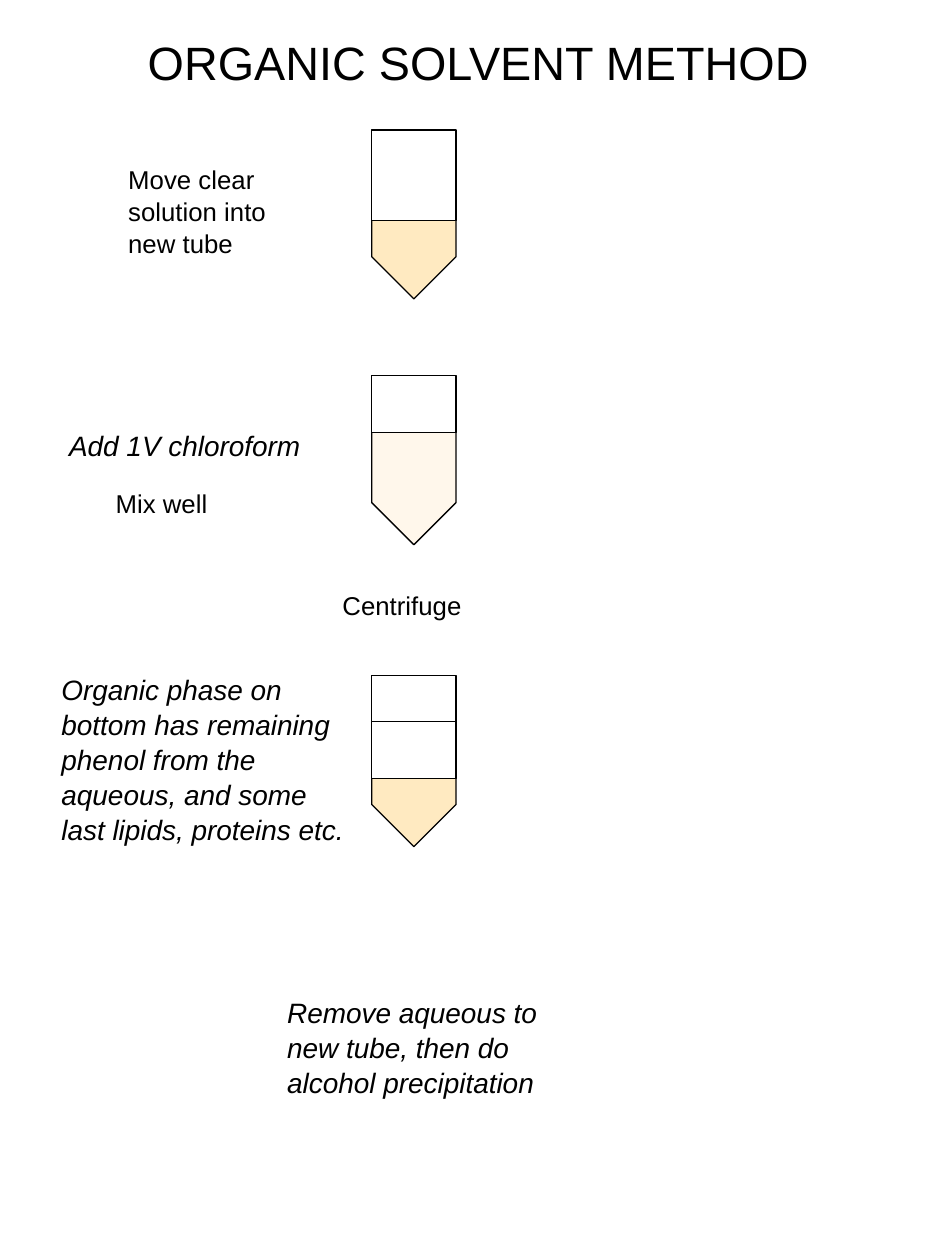
import pptx
import pptx.util
import pptx.dml.color
import pptx.enum.shapes
import pptx.enum.text

Pt = pptx.util.Pt
SHAPE = pptx.enum.shapes.MSO_SHAPE
ALIGN = pptx.enum.text.PP_ALIGN
HUES = {"ink": "000000", "white": "FFFFFF", "amber": "FFEAC1", "cream": "FFF7EB"}
STEP = {"size": Pt(14.7), "italic": False}
NOTE = {"size": Pt(16), "italic": True}
TITLE = {"size": Pt(26.7), "italic": False}


def hue(name):
    return pptx.dml.color.RGBColor.from_string(HUES[name])


class Board:
    face = "Arial"
    left, wide, tall = 212.4, 48.2, 95.8

    def __init__(self, slide):
        self.slide = slide

    def text(self, words, x, y, w, h, style, align=ALIGN.LEFT):
        box = self.slide.shapes.add_textbox(Pt(x), Pt(y), Pt(w), Pt(h))
        frame = box.text_frame
        frame.word_wrap = True
        frame.text = words
        for para in frame.paragraphs:
            para.alignment = align
            para.line_spacing = 1.04
            for key, value in {"name": self.face, **style}.items():
                setattr(para.font, key, value)
            para.font.color.rgb = hue("ink")

    def block(self, group, kind, x, y, w, h, fill, turn=0):
        shape = group.shapes.add_shape(kind, Pt(x), Pt(y), Pt(w), Pt(h))
        shape.rotation = turn
        shape.shadow.inherit = False
        shape.fill.solid()
        shape.fill.fore_color.rgb = hue(fill)
        shape.line.color.rgb = hue("ink")
        shape.line.width = Pt(0.75)

    def tube(self, y, fill, bands):
        group = self.slide.shapes.add_group_shape()
        x = self.left + (self.wide - self.tall) / 2
        top = y + (self.tall - self.wide) / 2
        self.block(group, SHAPE.PENTAGON, x, top, self.tall, self.wide, fill, 90)
        for start, height in bands:
            self.block(group, SHAPE.RECTANGLE, self.left, start, self.wide, height, "white")


def main():
    deck = pptx.Presentation()
    deck.slide_width, deck.slide_height = Pt(540), Pt(720)
    board = Board(deck.slides.add_slide(deck.slide_layouts[6]))

    board.text("ORGANIC SOLVENT METHOD", 29.5, 14.4, 488, 39.6, TITLE, ALIGN.CENTER)
    board.text("Move clear\nsolution into\nnew tube", 66.2, 89.3, 103.7, 60.5, STEP)
    board.tube(75, "amber", [(74.2, 51.8)])

    board.text("Add 1V chloroform", 32.4, 240.5, 171.4, 26.6, NOTE)
    board.text("Mix well", 59, 274.3, 95.8, 25.2, STEP)
    board.tube(215.5, "cream", [(214.6, 32.4)])
    board.text("Centrifuge", 188.6, 332.6, 95.8, 25.2, STEP)

    board.text(
        "Organic phase on bottom has remaining phenol from the aqueous, "
        "and some last lipids, proteins etc.",
        28, 380.2, 180.7, 104.4, NOTE)
    board.tube(388, "amber", [(387.4, 57.6), (385.9, 26.6)])
    board.text(
        "Remove aqueous to new tube, then do alcohol precipitation",
        157, 564.5, 180.7, 65.5, NOTE)

    deck.save("out.pptx")


if __name__ == "__main__":
    main()
